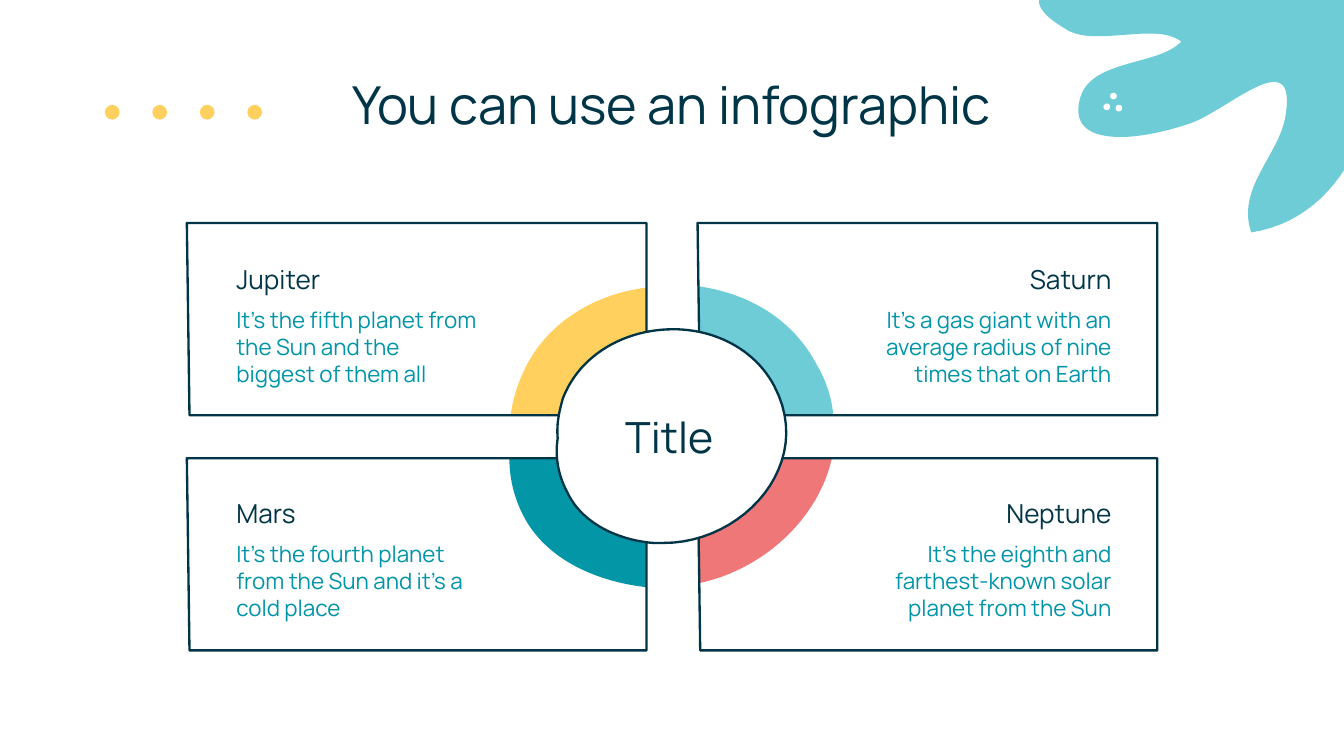
from pptx import Presentation
from pptx.dml.color import RGBColor
from pptx.enum.shapes import MSO_SHAPE
from pptx.enum.text import MSO_ANCHOR, MSO_AUTO_SIZE, PP_ALIGN
from pptx.util import Inches, Pt

# Content
TITLE = "You can use an infographic"
HUB = "Title"
CARDS = [  # name, text, column, row
    ("Jupiter", "It’s the fifth planet from the Sun and the biggest of them all", 0, 0),
    ("Mars", "It’s the fourth planet from the Sun and it’s a cold place", 0, 1),
    ("Saturn", "It’s a gas giant with an average radius of nine times that on Earth", 1, 0),
    ("Neptune", "It’s the eighth and farthest-known solar planet from the Sun", 1, 1),
]
FONT = "Manrope"
NAVY, TEAL, AQUA, GOLD = "003548", "0094A9", "6DCCD6", "FFD05E"
DEEP, CORAL, WHITE = "0396A6", "F07777", "FFFFFF"

# Outlines: pairs are corners, sixes are Bezier curves
SPLASH = [
    (7.74, -.03), (7.71, .03, 7.75, .11, 7.92, .21), (7.99, .26, 8.08, .27, 8.17, .27),
    (8.3, .27, 8.43, .25, 8.55, .25), (8.64, .25, 8.72, .26, 8.79, .31),
    (8.62, .49, 8.13, .44, 8.04, .72), (7.97, .95, 8.13, 1.02, 8.34, 1.02),
    (8.53, 1.02, 8.77, .95, 8.88, .91), (9.07, .83, 9.34, .61, 9.48, .61),
    (9.56, .61, 9.6, .68, 9.56, .89), (9.5, 1.17, 9.2, 1.41, 9.31, 1.73),
    (9.95, 1.63, 10.21, .99, 10.29, .43), (10.29, -.03),
]
ARCS = [
    (GOLD, [(4.81, 2.14), (4.4, 2.19, 4.01, 2.43, 3.86, 2.85),
            (3.83, 2.93, 3.81, 3.01, 3.8, 3.09), (4.16, 3.09),
            (4.17, 3.05, 4.18, 3.01, 4.19, 2.96), (4.3, 2.69, 4.54, 2.52, 4.81, 2.47)]),
    (DEEP, [(3.79, 3.41), (3.79, 3.55, 3.82, 3.69, 3.89, 3.83),
            (4.06, 4.17, 4.45, 4.33, 4.81, 4.37), (4.81, 4.03),
            (4.58, 4, 4.33, 3.88, 4.22, 3.66), (4.18, 3.58, 4.15, 3.49, 4.15, 3.41)]),
    (CORAL, [(5.83, 3.41), (5.75, 3.69, 5.49, 3.92, 5.19, 4.01), (5.2, 4.34),
             (5.68, 4.24, 6.09, 3.86, 6.19, 3.41)]),
    (AQUA, [(5.19, 2.13), (5.2, 2.47), (5.43, 2.52, 5.64, 2.65, 5.76, 2.88),
            (5.8, 2.95, 5.83, 3.02, 5.84, 3.09), (6.2, 3.09),
            (6.19, 2.97, 6.15, 2.84, 6.08, 2.72), (5.9, 2.37, 5.56, 2.18, 5.19, 2.13)]),
]
DISC = [
    (5.01, 2.45), (4.66, 2.45, 4.32, 2.63, 4.19, 2.96), (4.16, 3.06, 4.14, 3.16, 4.15, 3.26),
    (4.13, 3.39, 4.15, 3.53, 4.22, 3.66), (4.33, 3.9, 4.61, 4.02, 4.86, 4.04),
    (4.89, 4.04, 4.92, 4.04, 4.94, 4.04), (5.53, 4.04, 6.07, 3.45, 5.76, 2.87),
    (5.61, 2.59, 5.31, 2.45, 5.01, 2.45),
]
FRAME = [(1.39, 1.66), (4.81, 1.66), (4.81, 3.09), (1.41, 3.09)]
STEP_X, STEP_Y = 3.8, 1.75
TEXT_X, TEXT_STEP, TEXT_Y = 1.66, 4.7, 1.74

deck = Presentation()
deck.slide_width = Inches(10)
deck.slide_height = deck.slide_width * 9 // 16
slide = deck.slides.add_slide(deck.slide_layouts[5])
shapes = slide.shapes


def color(code):
    return RGBColor.from_string(code)


def paint(shape, fill=None, line=None):
    shape.shadow.inherit = False
    for part, code in ((shape.fill, fill), (shape.line.fill, line)):
        if code:
            part.solid()
            part.fore_color.rgb = color(code)
        else:
            part.background()
    if line:
        shape.line.width = Pt(1.25)


def trace(path, steps=24):
    """Turn corners and curves into a list of points."""
    points = [path[0]]
    for seg in path[1:]:
        if len(seg) == 2:
            points.append(seg)
            continue
        knots = [points[-1], seg[:2], seg[2:4], seg[4:]]
        for i in range(1, steps + 1):
            t = i / steps
            w = ((1 - t) ** 3, 3 * t * (1 - t) ** 2, 3 * t * t * (1 - t), t ** 3)
            points.append(tuple(sum(a * k[n] for a, k in zip(w, knots)) for n in (0, 1)))
    return [(Inches(x), Inches(y)) for x, y in points]


def blob(path, fill=None, line=None):
    points = trace(path)
    pen = shapes.build_freeform(*points[0], scale=1.0)
    pen.add_line_segments(points[1:], close=True)
    paint(pen.convert_to_shape(), fill, line)


def dot(x, y, size, fill):
    paint(shapes.add_shape(MSO_SHAPE.OVAL, *map(Inches, (x, y, size, size))), fill)


def write(shape, text, size, code, align, anchor=MSO_ANCHOR.TOP):
    frame = shape.text_frame
    frame.text = text
    margins = {f"margin_{s}": Inches(.1) for s in ("left", "right", "top", "bottom")}
    style = {"word_wrap": True, "auto_size": MSO_AUTO_SIZE.NONE,
             "vertical_anchor": anchor, **margins}
    for key, value in style.items():
        setattr(frame, key, value)
    para = frame.paragraphs[0]
    para.alignment = align
    font = para.runs[0].font
    for key, value in {"name": FONT, "size": Pt(size)}.items():
        setattr(font, key, value)
    font.color.rgb = color(code)


def label(box, *args):
    write(shapes.add_textbox(*map(Inches, box)), *args)


# Title
head = shapes.title
head.left, head.top, head.width, head.height = map(Inches, (.77, .44, 8.45, .45))
write(head, TITLE, 28, NAVY, PP_ALIGN.CENTER)

# Corner splash and colour arcs
blob(SPLASH, AQUA)
for code, path in ARCS:
    blob(path, code)

# Card frames, then the hub over them
for _, _, col, row in CARDS:
    blob([(x + col * STEP_X, y + row * STEP_Y) for x, y in FRAME], line=NAVY)
blob(DISC, WHITE, NAVY)
label((4.13, 3.02, 1.7, .45), HUB, 23, NAVY, PP_ALIGN.CENTER, MSO_ANCHOR.MIDDLE)

# Card text
for name, text, col, row in CARDS:
    x, y = TEXT_X + col * TEXT_STEP, 1.86 + row * TEXT_Y
    align = (PP_ALIGN.LEFT, PP_ALIGN.RIGHT)[col]
    label((x, y + .4, 2.01, .64), text, 12, TEAL, align, MSO_ANCHOR.MIDDLE)
    label((x, y, 2.01, .44), name, 14, NAVY, align)

# Dots
for x, y in ((8.21, .77), (8.26, .69), (8.3, .78)):
    dot(x, y, .05, WHITE)
for i in range(4):
    dot(.78 + i * 1.06 / 3, .78, .11, GOLD)

deck.save("out.pptx")
